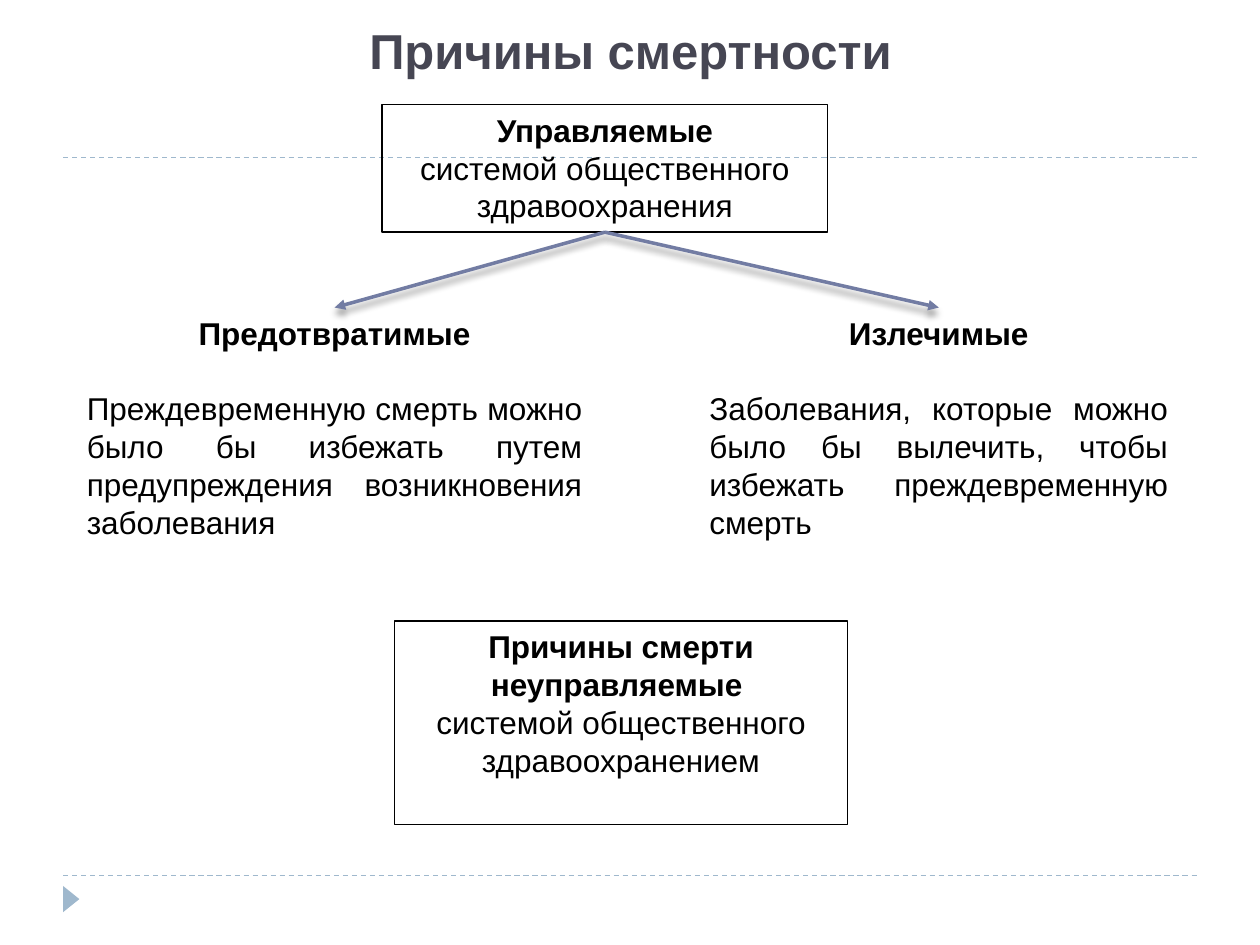
from dataclasses import dataclass
from typing import Optional

from lxml.etree import SubElement
from pptx import Presentation
from pptx.dml.color import RGBColor
from pptx.enum.dml import MSO_LINE
from pptx.enum.shapes import MSO_CONNECTOR, MSO_SHAPE
from pptx.enum.text import MSO_ANCHOR, PP_ALIGN
from pptx.oxml.ns import qn
from pptx.util import Cm, Pt

FONT = "Arial"
BLACK = "000000"
TITLE_COLOR = "464653"
RULE_COLOR = "9FB8CD"
ARROW_COLOR = "727CA3"


@dataclass
class Span:
    text: str
    bold: bool = False
    break_after: bool = False


@dataclass
class Para:
    spans: list[Span]
    align: PP_ALIGN = PP_ALIGN.CENTER
    before: float = 0


@dataclass
class Block:
    left: float
    top: float
    width: float
    height: float
    paras: list[Para]
    framed: bool = False


def rgb(value: str) -> RGBColor:
    return RGBColor.from_string(value)


def write(frame, paras: list[Para], size: float = 18, color: str = BLACK) -> None:
    frame.word_wrap = True
    for index, para in enumerate(paras):
        paragraph = frame.paragraphs[0] if index == 0 else frame.add_paragraph()
        paragraph.alignment = para.align
        if para.before:
            paragraph.space_before = Pt(para.before)
        for span in para.spans:
            run = paragraph.add_run()
            run.text = span.text
            run.font.name = FONT
            run.font.size = Pt(size)
            run.font.bold = span.bold
            run.font.color.rgb = rgb(color)
            if span.break_after:
                paragraph.add_line_break()


def draw_block(slide, block: Block) -> None:
    bounds = [Cm(v) for v in (block.left, block.top, block.width, block.height)]
    if block.framed:
        shape = slide.shapes.add_shape(MSO_SHAPE.RECTANGLE, *bounds)
        shape.shadow.inherit = False
        shape.fill.background()
        shape.line.color.rgb = rgb(BLACK)
        shape.line.width = Pt(0.75)
    else:
        shape = slide.shapes.add_textbox(*bounds)
    shape.text_frame.vertical_anchor = MSO_ANCHOR.TOP
    write(shape.text_frame, block.paras)


def draw_line(slide, start: tuple[float, float], end: tuple[float, float],
              color: str, width: float, dash: Optional[MSO_LINE] = None,
              arrow: bool = False) -> None:
    line = slide.shapes.add_connector(
        MSO_CONNECTOR.STRAIGHT, *(Cm(v) for v in (*start, *end)))
    line.line.color.rgb = rgb(color)
    line.line.width = Pt(width)
    if dash is not None:
        line.line.dash_style = dash
    properties = line._element.spPr
    effects = SubElement(properties, qn("a:effectLst"))
    if arrow:
        SubElement(properties.find(qn("a:ln")), qn("a:tailEnd"), type="triangle")
        shadow = SubElement(effects, qn("a:outerShdw"), blurRad=str(Pt(4)),
                            dist=str(Pt(3.4)), dir="5400000", rotWithShape="0")
        tint = SubElement(shadow, qn("a:srgbClr"), val=BLACK)
        SubElement(tint, qn("a:alpha"), val="40000")


def draw_marker(slide) -> None:
    marker = slide.shapes.add_shape(
        MSO_SHAPE.ISOSCELES_TRIANGLE, Cm(1.17), Cm(17.96), Cm(0.53), Cm(0.33))
    marker.rotation = 90
    marker.shadow.inherit = False
    marker.fill.solid()
    marker.fill.fore_color.rgb = rgb(RULE_COLOR)
    marker.line.fill.background()


def cause(left: float, width: float, heading: str, meaning: str) -> Block:
    return Block(left, 6.2, width, 4.88, [
        Para([Span(heading, bold=True)]),
        Para([Span(meaning)], PP_ALIGN.JUSTIFY, before=21.6),
    ])


MANAGED = Block(7.7, 2.11, 8.99, 2.57, [
    Para([Span("Управляемые", bold=True, break_after=True),
          Span("системой общественного здравоохранения")]),
], framed=True)

UNMANAGED = Block(7.95, 12.52, 9.14, 4.11, [
    Para([Span("Причины смерти неуправляемые ", bold=True)]),
    Para([Span("системой общественного здравоохранением")]),
], framed=True)

CAUSES = [
    cause(1.5, 10.49, "Предотвратимые",
          "Преждевременную смерть можно было бы избежать путем "
          "предупреждения возникновения заболевания"),
    cause(14.05, 9.75, "Излечимые",
          "Заболевания, которые можно было бы вылечить, чтобы "
          "избежать преждевременную смерть"),
]


def main() -> None:
    deck = Presentation()
    deck.slide_width, deck.slide_height = Cm(25.4), Cm(19.05)
    slide = deck.slides.add_slide(deck.slide_layouts[5])

    for rule_top in (17.65, 3.17):
        draw_line(slide, (1.27, rule_top), (24.13, rule_top),
                  RULE_COLOR, 0.75, dash=MSO_LINE.DASH)
    draw_marker(slide)

    title = slide.shapes.title
    title.left, title.top, title.width, title.height = (
        Cm(v) for v in (2.03, 0, 21.36, 2.03))
    title.text_frame.vertical_anchor = MSO_ANCHOR.MIDDLE
    write(title.text_frame, [Para([Span("Причины смертности", bold=True)])],
          size=28, color=TITLE_COLOR)

    for block in (*CAUSES, MANAGED, UNMANAGED):
        draw_block(slide, block)

    fork = (MANAGED.left + MANAGED.width / 2, MANAGED.top + MANAGED.height)
    for block in CAUSES:
        draw_line(slide, fork, (block.left + block.width / 2, block.top),
                  ARROW_COLOR, 2, arrow=True)

    deck.save("out.pptx")


if __name__ == "__main__":
    main()
